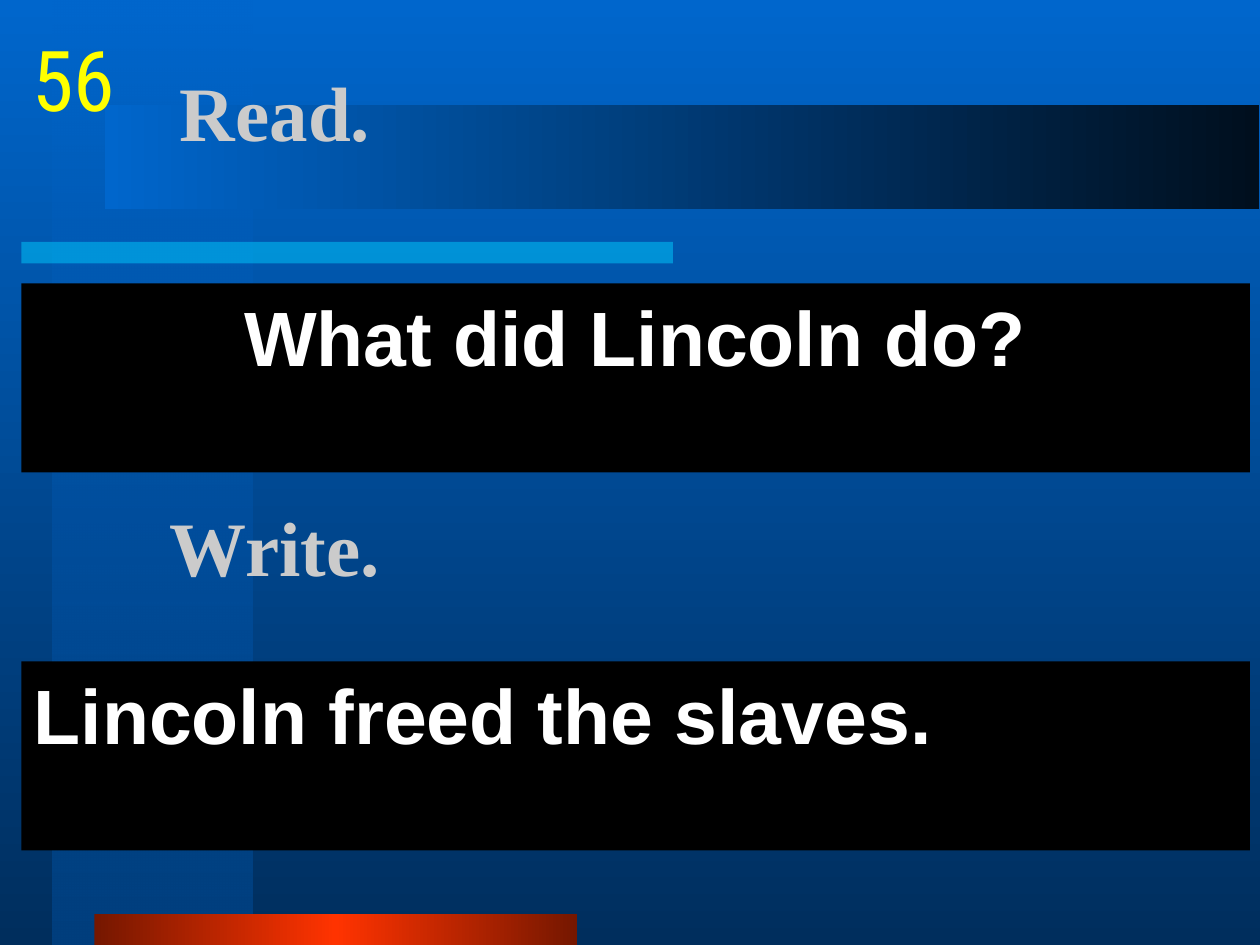
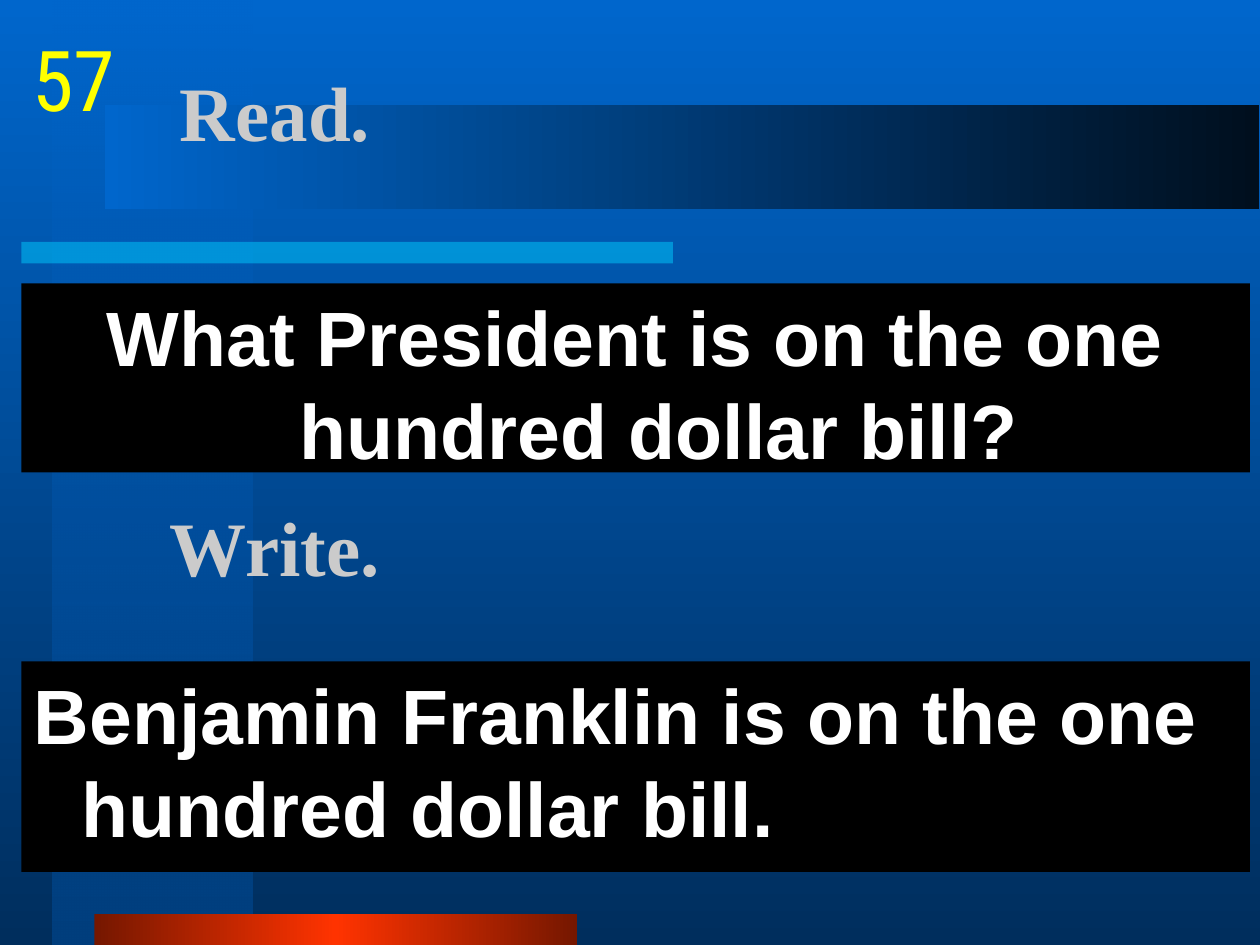
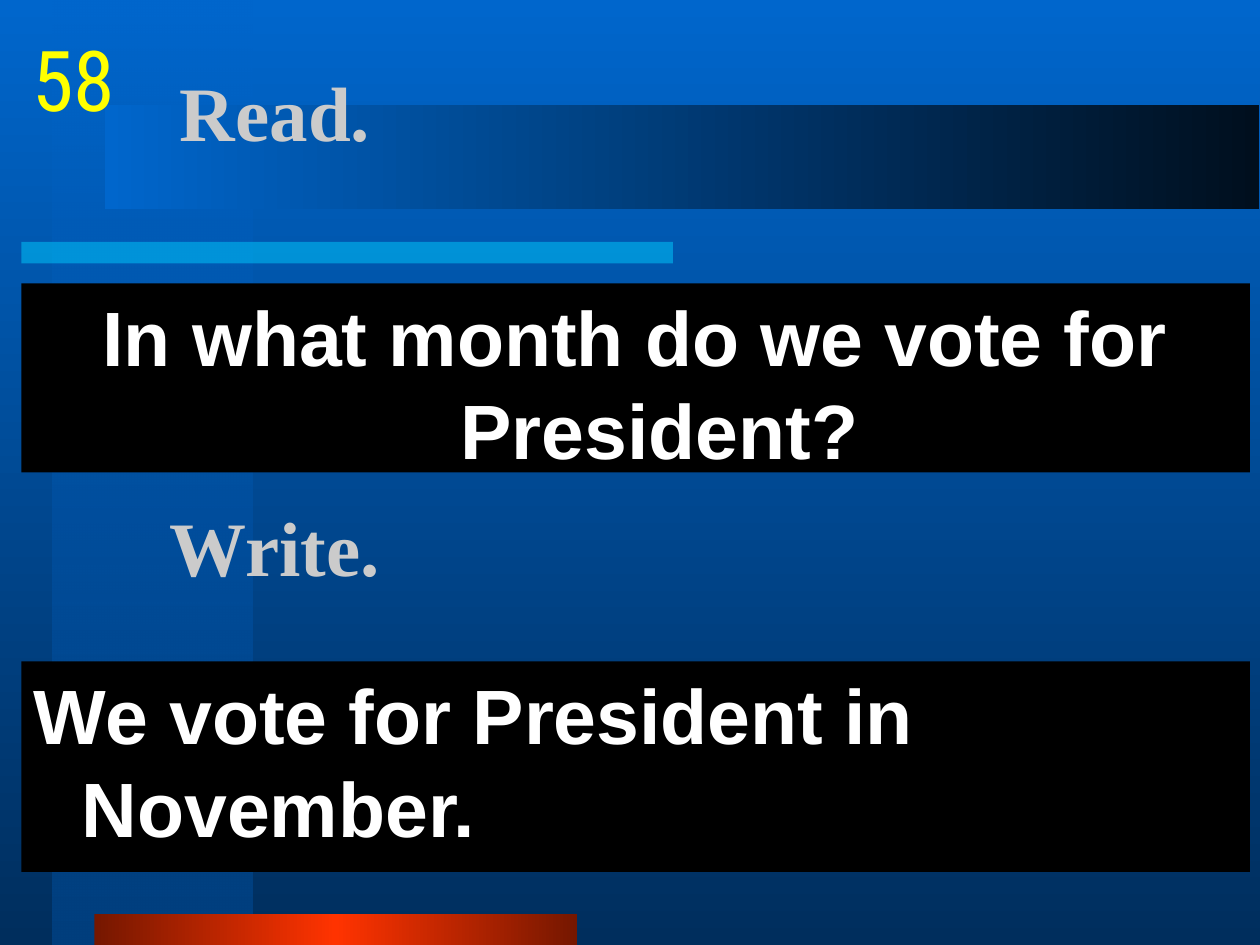
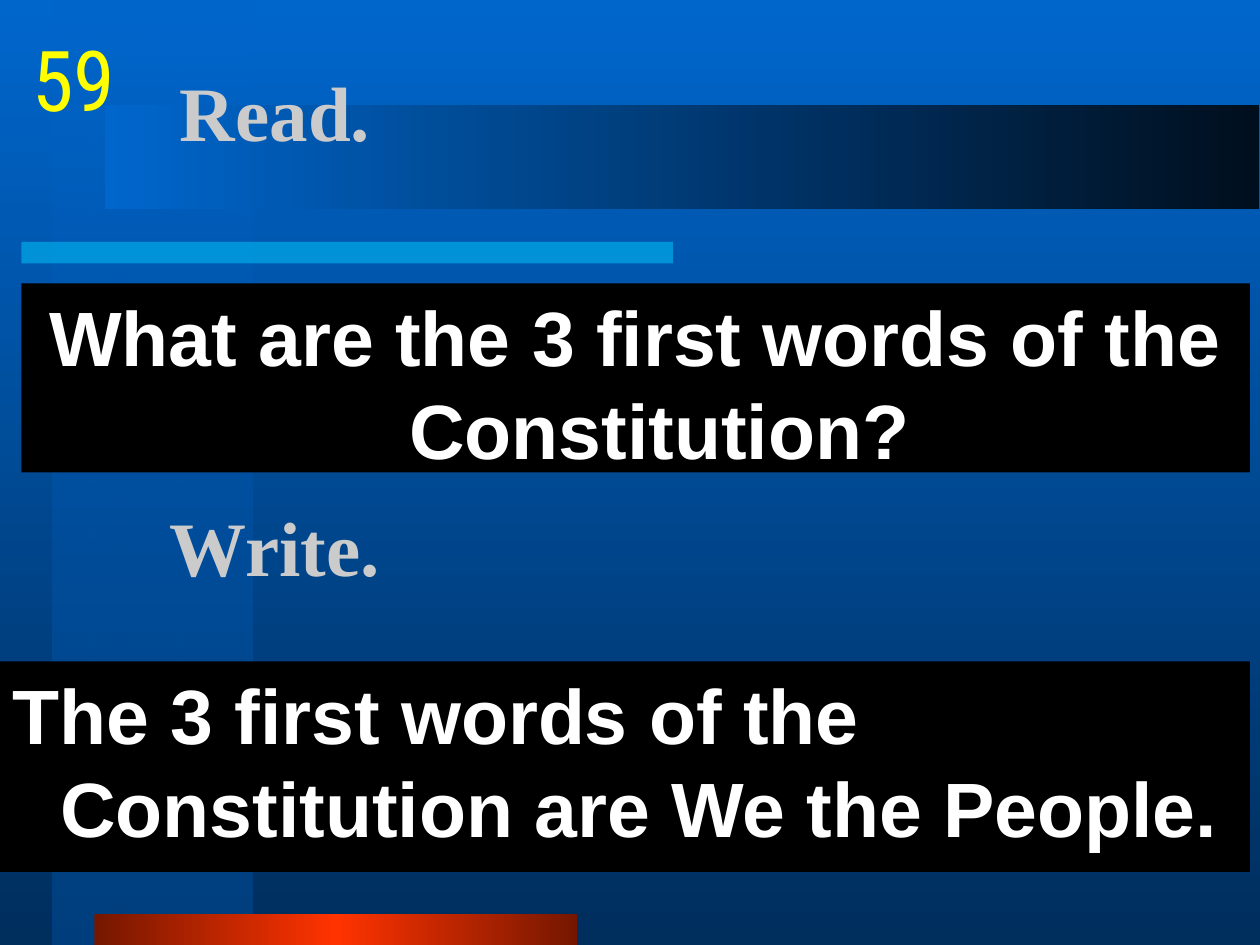
from lxml.etree import SubElement
from pptx import Presentation
from pptx.dml.color import RGBColor
from pptx.enum.shapes import MSO_SHAPE as Shape
from pptx.enum.text import MSO_ANCHOR as Anchor, PP_ALIGN as Align
from pptx.oxml.ns import qn
from pptx.util import Inches, Pt

BLUE = RGBColor(0x00, 0x66, 0xCC)
CYAN = RGBColor(0x00, 0xCC, 0xFF)
RED = RGBColor(0xFF, 0x33, 0x00)
BLACK = RGBColor(0x00, 0x00, 0x00)
WHITE = RGBColor(0xFF, 0xFF, 0xFF)
SILVER = RGBColor(0xCB, 0xCB, 0xCB)
YELLOW = RGBColor(0xFF, 0xFF, 0x00)
ORANGE = RGBColor(0xFF, 0x99, 0x33)

HEADING_FONT = {"name": "Times New Roman", "size": Pt(44), "bold": True}
SENTENCE_FONT = {"name": "Arial", "size": Pt(44), "bold": True}
NUMBER_FONT = {"name": "Roboto Condensed", "size": Pt(48)}

RIGHTWARD, DOWNWARD = 0, 270
PANEL_RIGHT = 9.92
HANGING_INDENT = Inches(0.38)

# number, question, answer, left and height of the answer panel
CARDS = [
    ("56", "What did Lincoln do?", "Lincoln freed the slaves.", 0.17, 1.5),
    ("57", "What President is on the one hundred dollar bill?",
     "Benjamin Franklin is on the one hundred dollar bill.", 0.17, 1.67),
    ("58", "In what month do we vote for President?",
     "We vote for President in November.", 0.17, 1.67),
    ("59", "What are the 3 first words of the Constitution?",
     "The 3 first words of the Constitution are We the People.", 0, 1.67),
]


def set_gradient(fill, owner, stops, angle=RIGHTWARD):
    """Fill with stops of (percent, colour, shade percent, alpha percent)."""
    fill.gradient()
    fill.gradient_angle = angle
    gradient = next(owner.iter(qn("a:gradFill")))
    stop_list = gradient.find(qn("a:gsLst"))
    for old_stop in list(stop_list):
        stop_list.remove(old_stop)
    for position, color, shade, alpha in stops:
        stop = SubElement(stop_list, qn("a:gs"), pos=str(position * 1000))
        value = SubElement(stop, qn("a:srgbClr"), val=str(color))
        if shade < 100:
            SubElement(value, qn("a:gamma"))
            SubElement(value, qn("a:shade"), val=str(shade * 1000))
            SubElement(value, qn("a:invGamma"))
        if alpha < 100:
            SubElement(value, qn("a:alpha"), val=str(alpha * 1000))
    return gradient


def add_band(slide, left, top, width, height):
    band = slide.shapes.add_shape(
        Shape.RECTANGLE, *map(Inches, (left, top, width, height)))
    band.shadow.inherit = False
    band.line.fill.background()
    return band


def decorate_layout(layout, slide):
    """Give the layout its background and bands, drawn first on a slide."""
    set_gradient(layout.background.fill, layout.element,
                 [(0, BLUE, 100, 100), (100, BLUE, 46, 100)], DOWNWARD)

    column = add_band(slide, 0.42, 0, 1.58, 7.5)
    set_gradient(column.fill, column.element,
                 [(0, BLUE, 100, 50), (100, BLUE, 62, 100)], DOWNWARD)

    underline = add_band(slide, 0.17, 1.92, 5.17, 0.17)
    underline.fill.solid()
    underline.fill.fore_color.rgb = CYAN
    color = next(underline.element.iter(qn("a:srgbClr")))
    SubElement(color, qn("a:alpha"), val="50000")

    footer = add_band(slide, 0.75, 7.25, 3.83, 0.25)
    set_gradient(footer.fill, footer.element,
                 [(0, RED, 46, 100), (50, RED, 100, 100), (100, RED, 46, 100)])

    title_band = add_band(slide, 0.83, 0.83, 9.16, 0.83)
    set_gradient(title_band.fill, title_band.element,
                 [(0, BLUE, 100, 100), (100, BLUE, 15, 100)])

    for band in (column, underline, footer, title_band):
        layout.shapes.element.append(band.element)


def add_text(slide, text, box, font_format, color=None, anchor=Anchor.TOP,
             align=Align.LEFT, wrap=True):
    shape = slide.shapes.add_textbox(*map(Inches, box))
    frame = shape.text_frame
    frame.word_wrap = wrap
    frame.vertical_anchor = anchor
    paragraph = frame.paragraphs[0]
    paragraph.alignment = align
    run = paragraph.add_run()
    run.text = text
    for name, value in font_format.items():
        setattr(run.font, name, value)
    if color is not None:
        run.font.color.rgb = color
    return shape


def add_heading(slide, text, box):
    add_text(slide, text, box, HEADING_FONT, SILVER, Anchor.MIDDLE)


def add_panel(slide, text, left, top, height, align=Align.LEFT):
    """Add a black panel holding one sentence with a hanging indent."""
    panel = add_text(slide, text, (left, top, PANEL_RIGHT - left, height),
                     SENTENCE_FONT, WHITE, align=align)
    panel.fill.solid()
    panel.fill.fore_color.rgb = BLACK
    properties = next(panel.element.iter(qn("a:pPr")))
    properties.set("marL", str(HANGING_INDENT))
    properties.set("indent", str(-HANGING_INDENT))
    spacing = SubElement(properties, qn("a:spcBef"))
    SubElement(spacing, qn("a:spcPct"), val="20000")


def add_number(slide, text):
    """Add the card number, without side margins so that it fits one line."""
    number = add_text(slide, text, (0.17, 0.17, 0.83, 0.83), NUMBER_FONT,
                      align=Align.CENTER, wrap=False)
    frame = number.text_frame
    frame.margin_left = frame.margin_right = 0
    font = frame.paragraphs[0].runs[0].font
    gradient = set_gradient(font.fill, number.element,
                            [(0, YELLOW, 100, 100), (100, ORANGE, 100, 100)])
    gradient.remove(gradient.find(qn("a:lin")))
    rectangle = SubElement(gradient, qn("a:path"), path="rect")
    SubElement(rectangle, qn("a:fillToRect"),
               dict.fromkeys("ltrb", "50000"))


def main():
    presentation = Presentation()
    presentation.slide_width = Inches(10)
    presentation.slide_height = Inches(7.5)
    layout = presentation.slide_layouts[6]
    for index, (number, question, answer, left, height) in enumerate(CARDS):
        slide = presentation.slides.add_slide(layout)
        if index == 0:
            decorate_layout(layout, slide)
        add_heading(slide, "Read.", (1.33, 0.25, 8.5, 1.25))
        add_panel(slide, question, 0.17, 2.25, 1.5, Align.CENTER)
        add_heading(slide, "Write.", (1.25, 3.5, 8.5, 1.67))
        add_panel(slide, answer, left, 5.25, height)
        add_number(slide, number)
    presentation.save("out.pptx")


if __name__ == "__main__":
    main()
